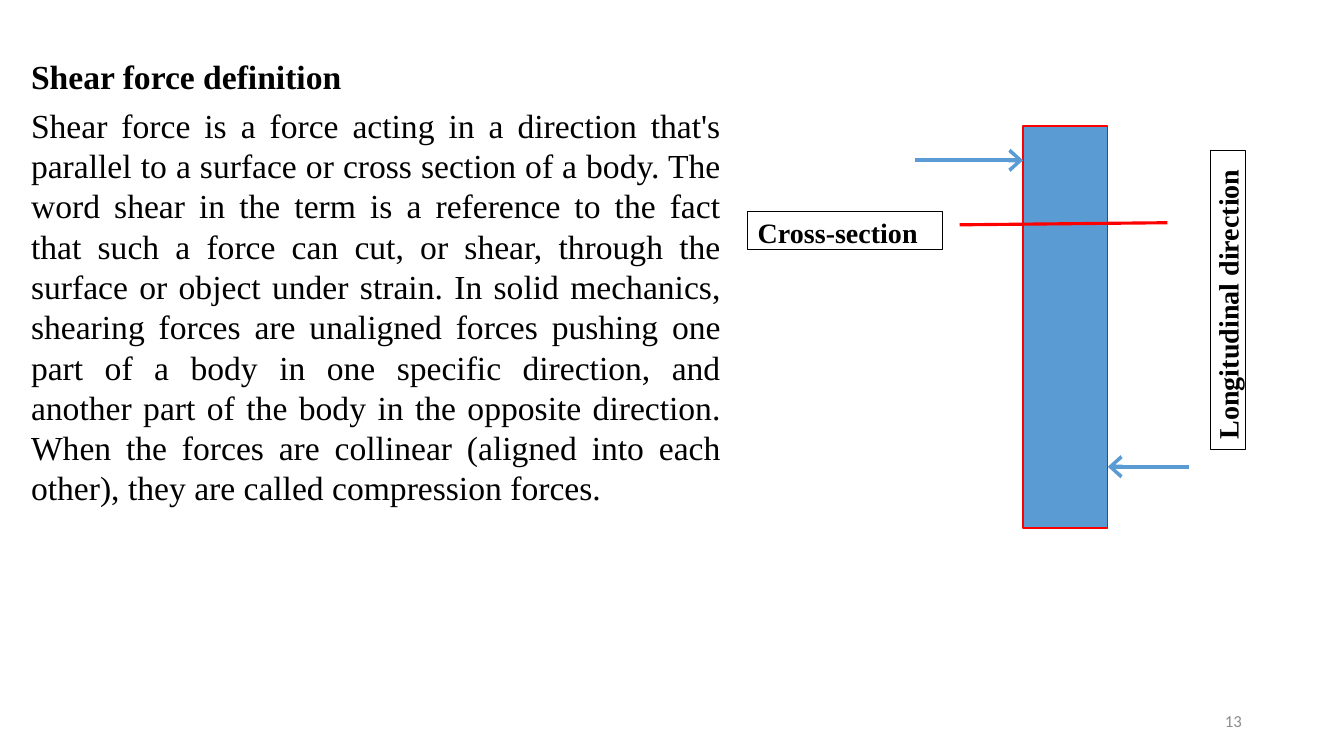
from dataclasses import dataclass

import lxml.etree
import pptx
import pptx.dml.color
import pptx.enum.shapes
import pptx.enum.text
import pptx.oxml.ns
import pptx.util
from pptx.util import Pt

ALIGN = pptx.enum.text.PP_ALIGN
ANCHOR = pptx.enum.text.MSO_ANCHOR


@dataclass(frozen=True)
class Theme:
    serif: str = "Times New Roman"
    sans: str = "Calibri"
    black: str = "000000"
    gray: str = "8C8C8C"
    blue: str = "5B9BD4"
    red: str = "FF0000"
    body_size: float = 24
    body_leading: float = 28.8
    label_size: float = 20
    number_size: float = 12


@dataclass(frozen=True)
class Frame:
    left: float
    top: float
    width: float
    height: float

    def lengths(self) -> tuple:
        return Pt(self.left), Pt(self.top), Pt(self.width), Pt(self.height)


@dataclass(frozen=True)
class Label:
    text: str
    frame: Frame
    margins: tuple[float, float, float, float]  # left, top, right, bottom
    upward: bool = False


@dataclass(frozen=True)
class Stroke:
    start: tuple[float, float]
    end: tuple[float, float]
    color: str
    width: float
    arrow: bool = False


THEME = Theme()
BODY_FRAME = Frame(15.1, 36.3, 506.9, 333.4)
NUMBER_FRAME = Frame(678.2, 500.4, 216, 28.8)
BAR_FRAME = Frame(730.8, 90, 60.5, 287.3)
BAR_RIGHT = BAR_FRAME.left + BAR_FRAME.width

HEADING = "Shear force definition"
DEFINITION = (
    "Shear force is a force acting in a direction that's parallel to a surface or "
    "cross section of a body. The word shear in the term is a reference to the fact "
    "that such a force can cut, or shear, through the surface or object under strain. "
    "In solid mechanics, shearing forces are unaligned forces pushing one part of a "
    "body in one specific direction, and another part of the body in the opposite "
    "direction. When the forces are collinear (aligned into each other), they are "
    "called compression forces."
)
LABELS = (
    Label("Cross-section", Frame(534.2, 151.2, 139, 26.8), (7.2, 2.5, 0, 0)),
    Label("Longitudinal direction", Frame(864.7, 107.3, 25, 213.8),
          (0, 0, 0, 7.2), upward=True),
)
STROKES = (
    Stroke((653.8, 114.5), (BAR_FRAME.left, 114.5), THEME.blue, 3, arrow=True),
    Stroke((849.6, 333.4), (BAR_RIGHT, 333.4), THEME.blue, 3, arrow=True),
    Stroke((685.4, 160.6), (833.8, 159.1), THEME.red, 2.25),
)


def rgb(color: str) -> pptx.dml.color.RGBColor:
    return pptx.dml.color.RGBColor.from_string(color)


def style_paragraph(para, font_name: str, size: float, color: str,
                    align, bold: bool = False) -> None:
    para.alignment = align
    for span in para.runs:
        span.font.name = font_name
        span.font.size = Pt(size)
        span.font.bold = bold
        span.font.color.rgb = rgb(color)


def add_rectangle(page, frame: Frame, line_color: str, line_width: float):
    """Add an unfilled, shadowless rectangle."""
    box = page.shapes.add_shape(
        pptx.enum.shapes.MSO_SHAPE.RECTANGLE, *frame.lengths())
    box.shadow.inherit = False
    box.fill.background()
    box.line.color.rgb = rgb(line_color)
    box.line.width = Pt(line_width)
    return box


def add_label(page, label: Label) -> None:
    box = add_rectangle(page, label.frame, THEME.black, 0.5)
    text_frame = box.text_frame
    text_frame.text = label.text
    text_frame.word_wrap = True
    text_frame.vertical_anchor = ANCHOR.TOP
    (text_frame.margin_left, text_frame.margin_top,
     text_frame.margin_right, text_frame.margin_bottom) = map(Pt, label.margins)
    if label.upward:
        text_frame._txBody.bodyPr.set("vert", "vert270")
    style_paragraph(text_frame.paragraphs[0], THEME.serif, THEME.label_size,
                    THEME.black, ALIGN.LEFT, bold=True)


def add_stroke(page, stroke: Stroke) -> None:
    line = page.shapes.add_connector(
        pptx.enum.shapes.MSO_CONNECTOR.STRAIGHT,
        *map(Pt, stroke.start), *map(Pt, stroke.end))
    line.line.color.rgb = rgb(stroke.color)
    line.line.width = Pt(stroke.width)
    if stroke.arrow:
        lxml.etree.SubElement(line.line._get_or_add_ln(), pptx.oxml.ns.qn("a:tailEnd"),
                              type="arrow", w="lg", len="med")
    lxml.etree.SubElement(line._element.spPr, pptx.oxml.ns.qn("a:effectLst"))


def add_body(page) -> None:
    text_frame = page.shapes.add_textbox(*BODY_FRAME.lengths()).text_frame
    text_frame.word_wrap = True
    text_frame.text = f"{HEADING}\n{DEFINITION}"
    for para, bold in zip(text_frame.paragraphs, (True, False)):
        para.line_spacing = Pt(THEME.body_leading)
        para.space_after = Pt(6)
        style_paragraph(para, THEME.serif, THEME.body_size, THEME.black,
                        ALIGN.JUSTIFY, bold)


def add_page_number(page) -> None:
    text_frame = page.shapes.add_textbox(*NUMBER_FRAME.lengths()).text_frame
    text_frame.word_wrap = True
    text_frame.vertical_anchor = ANCHOR.MIDDLE
    text_frame.text = "13"
    style_paragraph(text_frame.paragraphs[0], THEME.sans, THEME.number_size,
                    THEME.gray, ALIGN.RIGHT)


def main() -> None:
    deck = pptx.Presentation()
    deck.slide_width, deck.slide_height = Pt(960), Pt(540)
    page = deck.slides.add_slide(deck.slide_layouts[6])
    add_page_number(page)
    add_body(page)
    bar = add_rectangle(page, BAR_FRAME, THEME.red, 1)
    bar.fill.solid()
    bar.fill.fore_color.rgb = rgb(THEME.blue)
    for stroke in STROKES:
        add_stroke(page, stroke)
    for label in LABELS:
        add_label(page, label)
    deck.save("out.pptx")


if __name__ == "__main__":
    main()
